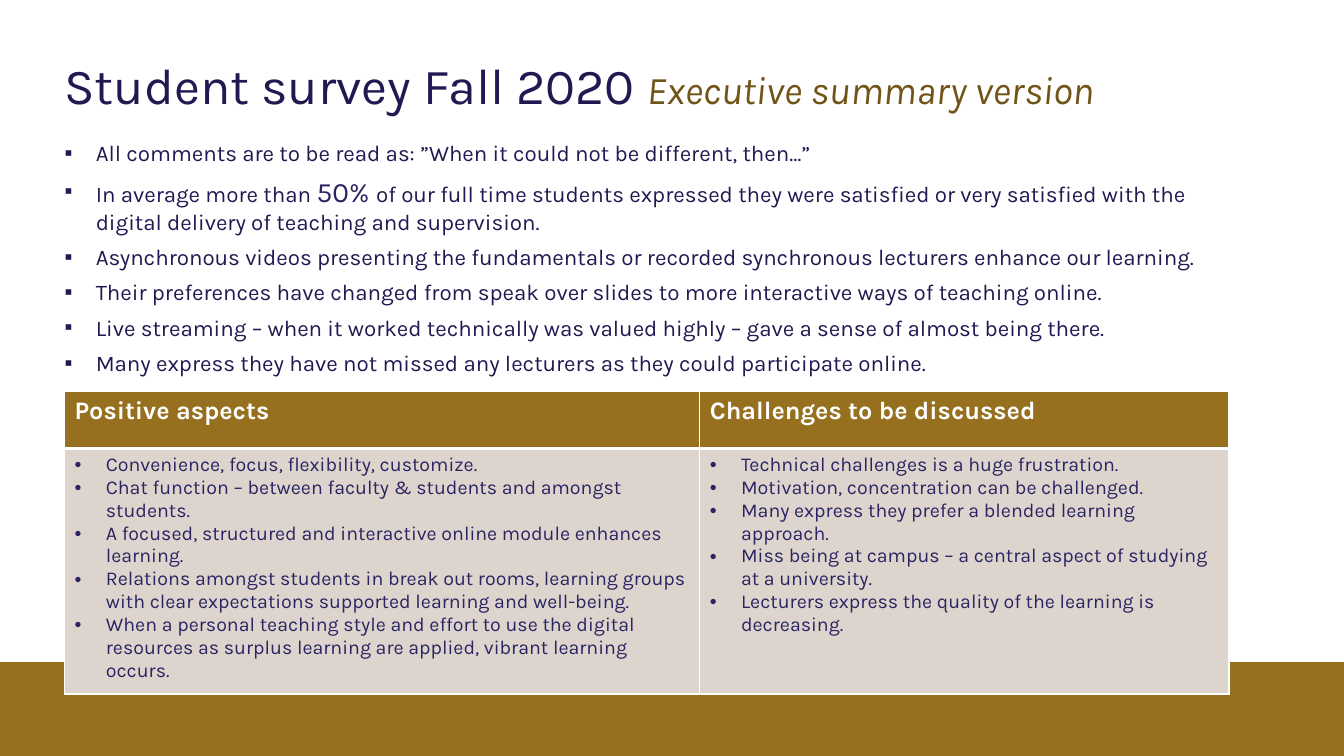
from dataclasses import dataclass

import pptx
import pptx.dml.color
import pptx.enum.shapes
import pptx.enum.text
import pptx.oxml
import pptx.oxml.ns
import pptx.util
from lxml import etree

Inches = pptx.util.Inches
Pt = pptx.util.Pt
RGBColor = pptx.dml.color.RGBColor
qn = pptx.oxml.ns.qn

FONT = "Karla"
GOLD = RGBColor(0x97, 0x70, 0x1F)
DARK_GOLD = RGBColor(0x71, 0x54, 0x17)
NAVY = RGBColor(0x21, 0x1A, 0x52)
INDIGO = RGBColor(0x2A, 0x24, 0x63)
SAND = RGBColor(0xDD, 0xD5, 0xCD)
WHITE = RGBColor(0xFF, 0xFF, 0xFF)

LEFT, WIDTH = 0.64, 11.55
INDENT = Inches(0.31)
ROW_HEIGHTS = (0.57, 0.9)
HEADER_RULE, THIN_RULE = 3, 1


@dataclass
class Run:
    text: str
    size: float
    color: RGBColor
    bold: bool = False
    italic: bool = False


@dataclass
class Column:
    heading: str
    width: float
    points: list[str]


TITLE = [
    Run("Student survey Fall 2020 ", 36, NAVY),
    Run("Executive summary version", 28, DARK_GOLD, italic=True),
]

FINDINGS = [
    [Run("All comments are to be read as: ”When it could not be different, then…”", 16, NAVY)],
    [
        Run("In average more than ", 16, NAVY),
        Run("50% ", 20, INDIGO),
        Run("of our full time students expressed they were satisfied or very satisfied "
            "with the digital delivery of teaching and supervision.", 16, NAVY),
    ],
    [Run("Asynchronous videos presenting the fundamentals or recorded synchronous "
         "lecturers enhance our learning.", 16, NAVY)],
    [Run("Their preferences have changed from speak over slides to more interactive ways "
         "of teaching online.", 16, NAVY)],
    [Run("Live streaming – when it worked technically was valued highly – gave a sense "
         "of almost being there.", 16, NAVY)],
    [Run("Many express they have not missed any lecturers as they could participate "
         "online.", 16, NAVY)],
]

COLUMNS = [
    Column("Positive aspects", 6.3, [
        "Convenience, focus, flexibility, customize.",
        "Chat function – between faculty & students and amongst students.",
        "A focused, structured and interactive online module enhances learning.",
        "Relations amongst students in break out rooms, learning groups with clear "
        "expectations supported learning and well-being.",
        "When a personal teaching style and effort to use the digital resources as "
        "surplus learning are applied, vibrant learning occurs.",
    ]),
    Column("Challenges to be discussed", 5.25, [
        "Technical challenges is a huge frustration.",
        "Motivation, concentration can be challenged.",
        "Many express they prefer a blended learning approach.",
        "Miss being at campus – a central aspect of studying at a university.",
        "Lecturers express the quality of the learning is decreasing.",
    ]),
]


def add_runs(p, runs: list[Run]) -> None:
    for run in runs:
        r = p.add_run()
        r.text = run.text
        r.font.name = FONT
        r.font.size = Pt(run.size)
        r.font.bold = run.bold
        r.font.italic = run.italic
        r.font.color.rgb = run.color


def add_bullets(tf, items: list[list[Run]], mark: str, gap: float = 0) -> None:
    for i, runs in enumerate(items):
        p = tf.add_paragraph() if i else tf.paragraphs[0]
        pPr = p._p.get_or_add_pPr()
        pPr.set("marL", str(INDENT))
        pPr.set("indent", str(-INDENT))
        etree.SubElement(pPr, qn("a:buFont"), typeface="Arial")
        etree.SubElement(pPr, qn("a:buChar"), char=mark)
        if i:
            p.space_before = Pt(gap)
        add_runs(p, runs)


def add_text_frame(slide, top: float, width: float, height: float,
                   inset_top: float, inset_bottom: float):
    box = slide.shapes.add_textbox(Inches(LEFT), Inches(top), Inches(width), Inches(height))
    tf = box.text_frame
    tf.word_wrap = True
    tf.vertical_anchor = pptx.enum.text.MSO_ANCHOR.TOP
    tf.margin_left = tf.margin_right = 0
    tf.margin_top, tf.margin_bottom = Inches(inset_top), Inches(inset_bottom)
    return tf


def style_cell(cell, fill: RGBColor, top: float, bottom: float) -> None:
    """Fill the cell and rule it in white; top and bottom are line widths in points."""
    tcPr = cell._tc.get_or_add_tcPr()
    for side, width in (("L", THIN_RULE), ("R", THIN_RULE), ("T", top), ("B", bottom)):
        ln = etree.SubElement(tcPr, qn(f"a:ln{side}"), w=str(Pt(width)))
        solid = etree.SubElement(ln, qn("a:solidFill"))
        etree.SubElement(solid, qn("a:srgbClr"), val=str(WHITE))
    cell.fill.solid()
    cell.fill.fore_color.rgb = fill


def add_footer_band(slide) -> None:
    sp = slide.shapes.add_shape(pptx.enum.shapes.MSO_SHAPE.RECTANGLE,
                                0, Inches(6.57), Inches(13.33), Inches(0.93))
    sp.shadow.inherit = False
    sp.fill.solid()
    sp.fill.fore_color.rgb = GOLD
    sp.line.fill.background()


def add_aspects_table(slide) -> None:
    table = slide.shapes.add_table(2, len(COLUMNS), Inches(LEFT), Inches(3.88),
                                   Inches(WIDTH), Inches(sum(ROW_HEIGHTS))).table
    for row, height in zip(table.rows, ROW_HEIGHTS):
        row.height = Inches(height)
    for i, column in enumerate(COLUMNS):
        table.columns[i].width = Inches(column.width)
        head, body = table.cell(0, i), table.cell(1, i)
        style_cell(head, GOLD, THIN_RULE, HEADER_RULE)
        add_runs(head.text_frame.paragraphs[0], [Run(column.heading, 18, WHITE, bold=True)])
        style_cell(body, SAND, HEADER_RULE, THIN_RULE)
        add_bullets(body.text_frame, [[Run(t, 14, INDIGO)] for t in column.points], "•")


def main() -> None:
    prs = pptx.Presentation()
    prs.slide_width, prs.slide_height = Inches(13.33), Inches(7.5)
    slide = prs.slides.add_slide(prs.slide_layouts[6])

    add_footer_band(slide)
    title = add_text_frame(slide, 0.39, 12.55, 1.15, 0.21, 0).paragraphs[0]
    title.line_spacing = 0.9
    add_runs(title, TITLE)
    add_bullets(add_text_frame(slide, 1.33, WIDTH, 3.91, 0.05, 0.05), FINDINGS, "▪", gap=6)
    add_aspects_table(slide)

    prs.save("out.pptx")


if __name__ == "__main__":
    main()
